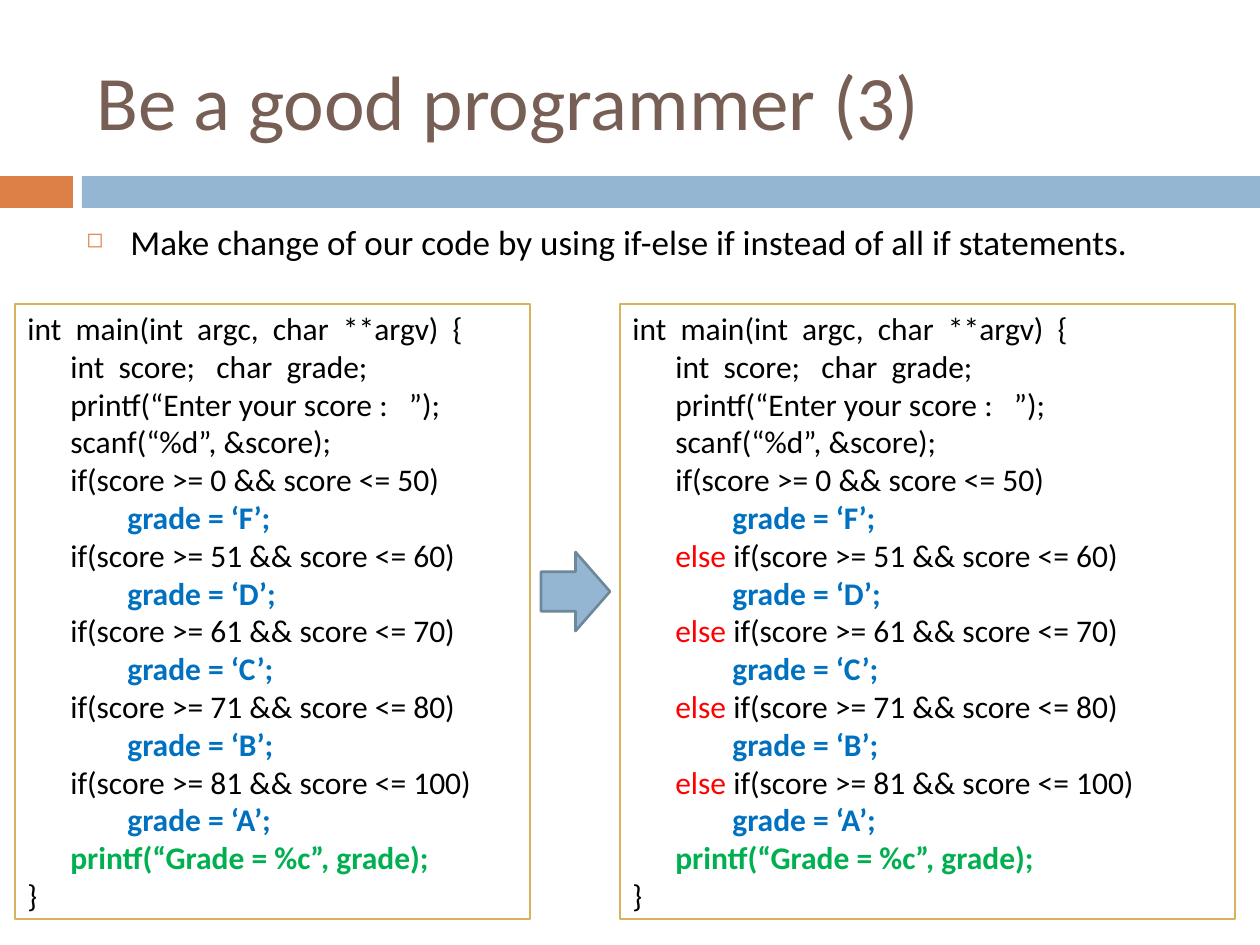
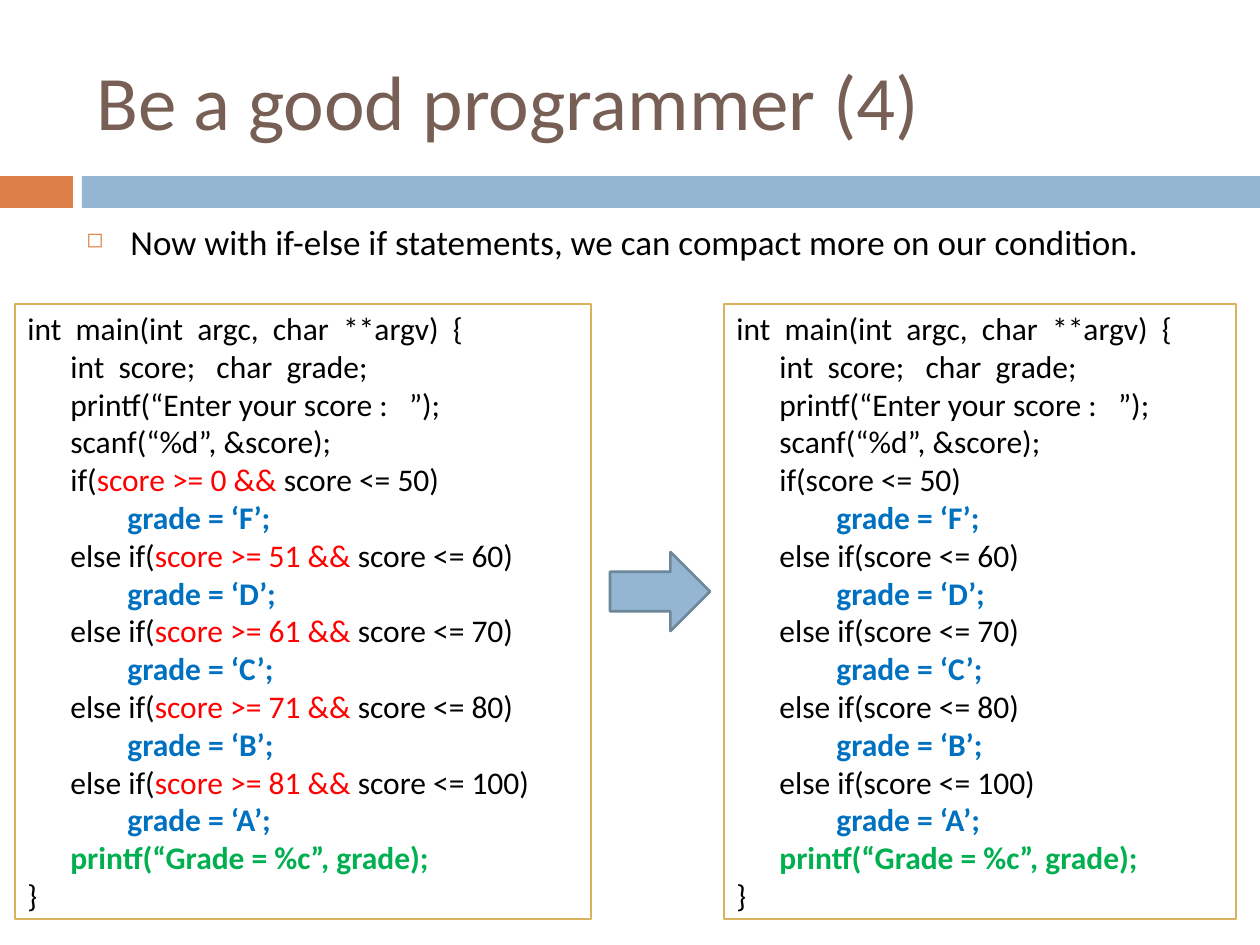
from pptx import Presentation
from pptx.dml.color import RGBColor
from pptx.enum.shapes import MSO_SHAPE
from pptx.enum.text import MSO_ANCHOR, PP_ALIGN
from pptx.oxml.ns import qn
from pptx.util import Emu, Pt
from lxml.etree import SubElement

PX_PER_INCH = 126
FONT = "Calibri"

BLACK = RGBColor(0x00, 0x00, 0x00)
WHITE = RGBColor(0xFF, 0xFF, 0xFF)
BROWN = RGBColor(0x77, 0x5F, 0x55)
ORANGE = RGBColor(0xDD, 0x80, 0x47)
SKY = RGBColor(0x94, 0xB6, 0xD2)
SLATE = RGBColor(0x6D, 0x87, 0x9B)
GOLD = RGBColor(0xD8, 0xB2, 0x5C)
BLUE = RGBColor(0x00, 0x70, 0xC0)
GREEN = RGBColor(0x00, 0xB0, 0x50)
RED = RGBColor(0xFF, 0x00, 0x00)

# Code panels: shared vertical extent and left margin of each code level
PANEL_TOP, PANEL_HEIGHT = 304, 615
ARROW_TOP, ARROW_HEIGHT = 552, 79
LEVEL_MARGINS = (0, 43, 100)

GRADES = ((0, 50, "F"), (51, 60, "D"), (61, 70, "C"), (71, 80, "B"), (81, 100, "A"))


def px(n):
    return Emu(round(n * 914400 / PX_PER_INCH))


def add_box(s, kind, x, y, w, h, fill, line=None):
    sp = s.shapes.add_shape(kind, px(x), px(y), px(w), px(h))
    sp.shadow.inherit = False
    sp.fill.solid()
    sp.fill.fore_color.rgb = fill
    if line is None:
        sp.line.fill.background()
    else:
        sp.line.color.rgb = line
        sp.line.width = Pt(1.5)
    return sp


def add_run(p, text, size, color=BLACK, bold=False):
    r = p.add_run()
    r.text = text
    r.font.name = FONT
    r.font.size = Pt(size)
    r.font.bold = bold
    r.font.color.rgb = color


def add_text(s, x, y, w, h, text, size, color, anchor):
    tf = s.shapes.add_textbox(px(x), px(y), px(w), px(h)).text_frame
    tf.word_wrap = True
    tf.vertical_anchor = anchor
    p = tf.paragraphs[0]
    add_run(p, text, size, color)
    return p


def set_indent(p, margin, hanging=0):
    pPr = p._p.get_or_add_pPr()
    pPr.set("marL", str(px(margin)))
    pPr.set("indent", str(-px(hanging)))
    return pPr


def add_bullet(p):
    p.space_before = Pt(7)
    pPr = set_indent(p, 44, 44)
    color = SubElement(pPr, qn("a:buClr"))
    SubElement(color, qn("a:srgbClr"), val=str(ORANGE))
    SubElement(pPr, qn("a:buSzPct"), val="60000")
    SubElement(pPr, qn("a:buChar"), char="◻")


def add_frame(s, title, point):
    """Title, coloured bands and the bulleted point."""
    add_box(s, MSO_SHAPE.RECTANGLE, 0, 176, 73, 32, ORANGE)
    add_box(s, MSO_SHAPE.RECTANGLE, 82, 176, 1178, 32, SKY)
    add_text(s, 84, 32, 1124, 136, title, 44, BROWN, MSO_ANCHOR.MIDDLE)
    add_bullet(add_text(s, 74, 214, 1181, 100, point, 20, BLACK, MSO_ANCHOR.TOP))


# Condition styles: each returns the runs of one branch
def plain_if(low, high):
    return [(f"if(score >= {low} && score <= {high})",)]


def marked_else(low, high):
    if low == 0:
        return plain_if(low, high)
    return [("else", RED), (f" if(score >= {low} && score <= {high})",)]


def if_keyword(low):
    return "if(" if low == 0 else "else if("


def marked_lower_bound(low, high):
    return [(if_keyword(low),), (f"score >= {low} && ", RED), (f"score <= {high})",)]


def upper_bound_only(low, high):
    return [(f"{if_keyword(low)}score <= {high})",)]


def code_lines(condition):
    """The program as (level, runs) pairs."""
    lines = [
        (0, [("int  main(int  argc,  char  **argv)  {",)]),
        (1, [("int  score;   char  grade;",)]),
        (1, [("printf(“Enter your score :   ”);",)]),
        (1, [("scanf(“%d”, &score);",)]),
    ]
    for low, high, grade in GRADES:
        lines.append((1, condition(low, high)))
        lines.append((2, [(f"grade = ‘{grade}’;", BLUE, True)]))
    lines.append((1, [("printf(“Grade = %c”, grade);", GREEN, True)]))
    lines.append((0, [("}",)]))
    return lines


def add_code_panel(s, x, w, condition):
    sp = add_box(s, MSO_SHAPE.RECTANGLE, x, PANEL_TOP, w, PANEL_HEIGHT, WHITE, GOLD)
    tf = sp.text_frame
    tf.word_wrap = True
    tf.vertical_anchor = MSO_ANCHOR.MIDDLE
    for i, (level, runs) in enumerate(code_lines(condition)):
        p = tf.add_paragraph() if i else tf.paragraphs[0]
        p.alignment = PP_ALIGN.LEFT
        set_indent(p, LEVEL_MARGINS[level])
        for run in runs:
            add_run(p, run[0], 18, *run[1:])


def add_comparison(prs, title, point, before, arrow, after):
    """One slide: code before, an arrow, code after."""
    s = prs.slides.add_slide(prs.slide_layouts[6])
    add_frame(s, title, point)
    add_code_panel(s, *before)
    add_code_panel(s, *after)
    x, w = arrow
    add_box(s, MSO_SHAPE.RIGHT_ARROW, x, ARROW_TOP, w, ARROW_HEIGHT, SKY, SLATE)


def main():
    prs = Presentation()
    prs.slide_width, prs.slide_height = px(1260), px(945)

    add_comparison(
        prs,
        "Be a good programmer (3)",
        "Make change of our code by using if-else if instead of all if statements.",
        before=(15, 515, plain_if),
        arrow=(541, 69),
        after=(620, 615, marked_else),
    )
    add_comparison(
        prs,
        "Be a good programmer (4)",
        "Now with if-else if statements, we can compact more on our condition.",
        before=(15, 576, marked_lower_bound),
        arrow=(610, 100),
        after=(724, 512, upper_bound_only),
    )

    prs.save("out.pptx")


if __name__ == "__main__":
    main()
